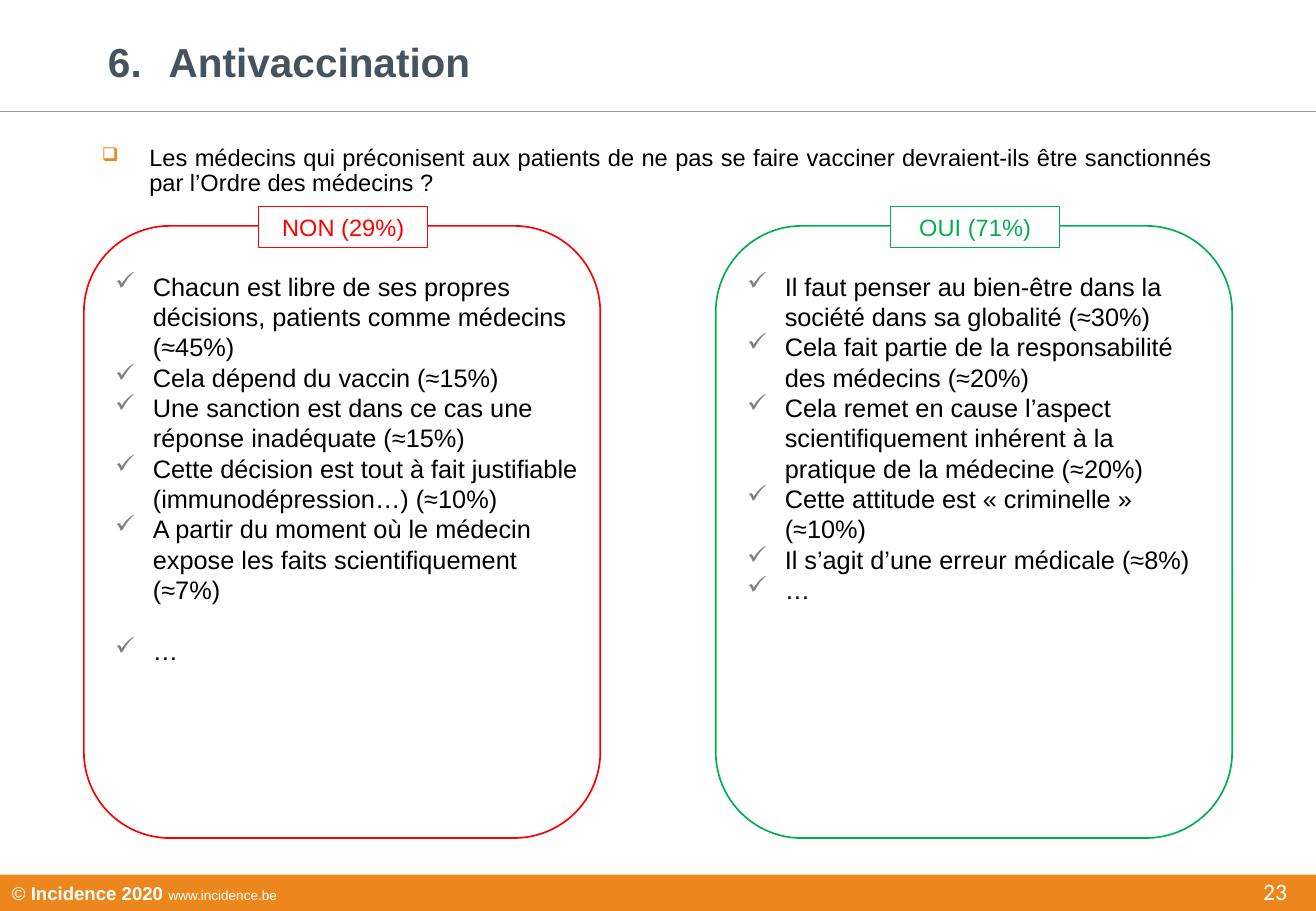
from lxml.etree import SubElement
from pptx import Presentation
from pptx.dml.color import RGBColor
from pptx.enum.shapes import MSO_CONNECTOR as Connector, MSO_SHAPE as Shape
from pptx.enum.text import MSO_ANCHOR as Anchor, PP_ALIGN as Align
from pptx.oxml.ns import qn
from pptx.util import Inches, Pt

ORANGE = RGBColor(0xEC, 0x87, 0x1D)
RULE_GREY = RGBColor(0x99, 0x99, 0x99)
CHECK_GREY = RGBColor(0x80, 0x80, 0x80)
SLATE = RGBColor(0x44, 0x53, 0x5E)
RED = RGBColor(0xFF, 0x00, 0x00)
GREEN = RGBColor(0x00, 0xB0, 0x50)
BLACK = RGBColor(0x00, 0x00, 0x00)
WHITE = RGBColor(0xFF, 0xFF, 0xFF)

QUESTION = (
    "Les médecins qui préconisent aux patients de ne pas se faire vacciner "
    "devraient-ils être sanctionnés par l’Ordre des médecins ?"
)
NO_REASONS = [
    "Chacun est libre de ses propres décisions, patients comme médecins (≈45%)",
    "Cela dépend du vaccin (≈15%)",
    "Une sanction est dans ce cas une réponse inadéquate (≈15%)",
    "Cette décision est tout à fait justifiable (immunodépression…) (≈10%)",
    "A partir du moment où le médecin expose les faits scientifiquement (≈7%)",
    "…",
]
YES_REASONS = [
    "Il faut penser au bien-être dans la société dans sa globalité (≈30%)",
    "Cela fait partie de la responsabilité des médecins (≈20%)",
    "Cela remet en cause l’aspect scientifiquement inhérent à la pratique de la médecine (≈20%)",
    "Cette attitude est « criminelle » (≈10%)",
    "Il s’agit d’une erreur médicale (≈8%)",
    "…",
]


def add_span(para, text, size, color, bold=False, font="Arial"):
    """Add one formatted run to a paragraph."""
    span = para.add_run()
    span.text = text
    span.font.name = font
    span.font.size = Pt(size)
    span.font.bold = bold
    span.font.color.rgb = color


def add_text_box(page, left, top, width, height, anchor=Anchor.TOP):
    """Add a wrapping text box and return its text frame."""
    box = page.shapes.add_textbox(Inches(left), Inches(top), Inches(width), Inches(height))
    frame = box.text_frame
    frame.word_wrap = True
    frame.vertical_anchor = anchor
    return frame


def set_indent(para, indent):
    """Give a paragraph a hanging indent and return its properties."""
    props = para._p.get_or_add_pPr()
    props.set("marL", str(Inches(indent)))
    props.set("indent", str(-Inches(indent)))
    return props


def set_bullet(para, char, color, indent, percent=100):
    """Give a paragraph a coloured bullet character."""
    props = set_indent(para, indent)
    tint = SubElement(props, qn("a:buClr"))
    SubElement(tint, qn("a:srgbClr"), val=str(color))
    SubElement(props, qn("a:buSzPct"), val=str(percent * 1000))
    SubElement(props, qn("a:buChar"), char=char)


def add_panel(page, kind, left, top, width, height, fill=None, line=None, weight=1):
    """Add a preset shape with an optional fill and outline."""
    panel = page.shapes.add_shape(kind, Inches(left), Inches(top), Inches(width), Inches(height))
    panel.shadow.inherit = False
    if fill is None:
        panel.fill.background()
    else:
        panel.fill.solid()
        panel.fill.fore_color.rgb = fill
    if line is None:
        panel.line.fill.background()
    else:
        panel.line.color.rgb = line
        panel.line.width = Pt(weight)
    return panel


def add_title(page):
    """Add the numbered title and the rule below it."""
    frame = add_text_box(page, 0.79, 0.27, 8.15, 0.52, Anchor.MIDDLE)
    para = frame.paragraphs[0]
    props = set_indent(para, 0.5)
    SubElement(props, qn("a:buFont"), typeface="+mj-lt")
    SubElement(props, qn("a:buAutoNum"), type="arabicPeriod", startAt="6")
    para.line_spacing = 0.9
    add_span(para, "Antivaccination", 24, SLATE, bold=True)
    rule = page.shapes.add_connector(
        Connector.STRAIGHT, Inches(0), Inches(0.92), Inches(10.83), Inches(0.92)
    )
    rule.line.color.rgb = RULE_GREY
    rule.line.width = Pt(0.5)
    SubElement(rule._element.spPr, qn("a:effectLst"))


def add_question(page):
    """Add the survey question."""
    para = add_text_box(page, 0.74, 1.15, 9.34, 0.53).paragraphs[0]
    set_bullet(para, "❑", ORANGE, 0.39, 80)
    para.alignment = Align.JUSTIFY
    para.line_spacing = 0.9
    add_span(para, QUESTION, 14, BLACK)


def add_answer(page, left, label, color, reasons, last_gap=0):
    """Add an outlined answer with its label and checked reasons."""
    add_panel(page, Shape.ROUNDED_RECTANGLE, left, 1.86, 4.25, 5.04, line=color)
    tag = add_panel(page, Shape.RECTANGLE, left + 1.44, 1.7, 1.39, 0.34, WHITE, color, 0.75)
    para = tag.text_frame.paragraphs[0]
    para.alignment = Align.CENTER
    add_span(para, label, 14, color)
    frame = add_text_box(page, left + 0.16, 2.18, 4.02, 3.13)
    for index, reason in enumerate(reasons):
        para = frame.paragraphs[0] if index == 0 else frame.add_paragraph()
        set_bullet(para, "✓", CHECK_GREY, 0.31)
        add_span(para, reason, 15, BLACK)
    para.space_before = Pt(last_gap)


def add_footer(page):
    """Add the footer band and the page number."""
    band = add_panel(page, Shape.RECTANGLE, 0, 7.2, 10.83, 0.3, ORANGE)
    band.text_frame.vertical_anchor = Anchor.MIDDLE
    para = band.text_frame.paragraphs[0]
    para.alignment = Align.LEFT
    add_span(para, "© ", 11, WHITE)
    add_span(para, "Incidence 2020 ", 11, WHITE, bold=True)
    add_span(para, "www.incidence.be", 8, WHITE)
    number = add_text_box(page, 8.4, 7.1, 2.29, 0.4, Anchor.BOTTOM).paragraphs[0]
    number.alignment = Align.RIGHT
    add_span(number, "23", 14, WHITE, font="Calibri")


def main():
    """Build the slide and save the deck."""
    deck = Presentation()
    deck.slide_width = Inches(10.83)
    deck.slide_height = Inches(7.5)
    page = deck.slides.add_slide(deck.slide_layouts[6])
    add_title(page)
    add_question(page)
    add_answer(page, 0.69, "NON (29%)", RED, NO_REASONS, last_gap=18)
    add_answer(page, 5.89, "OUI (71%)", GREEN, YES_REASONS)
    add_footer(page)
    deck.save("out.pptx")


if __name__ == "__main__":
    main()
